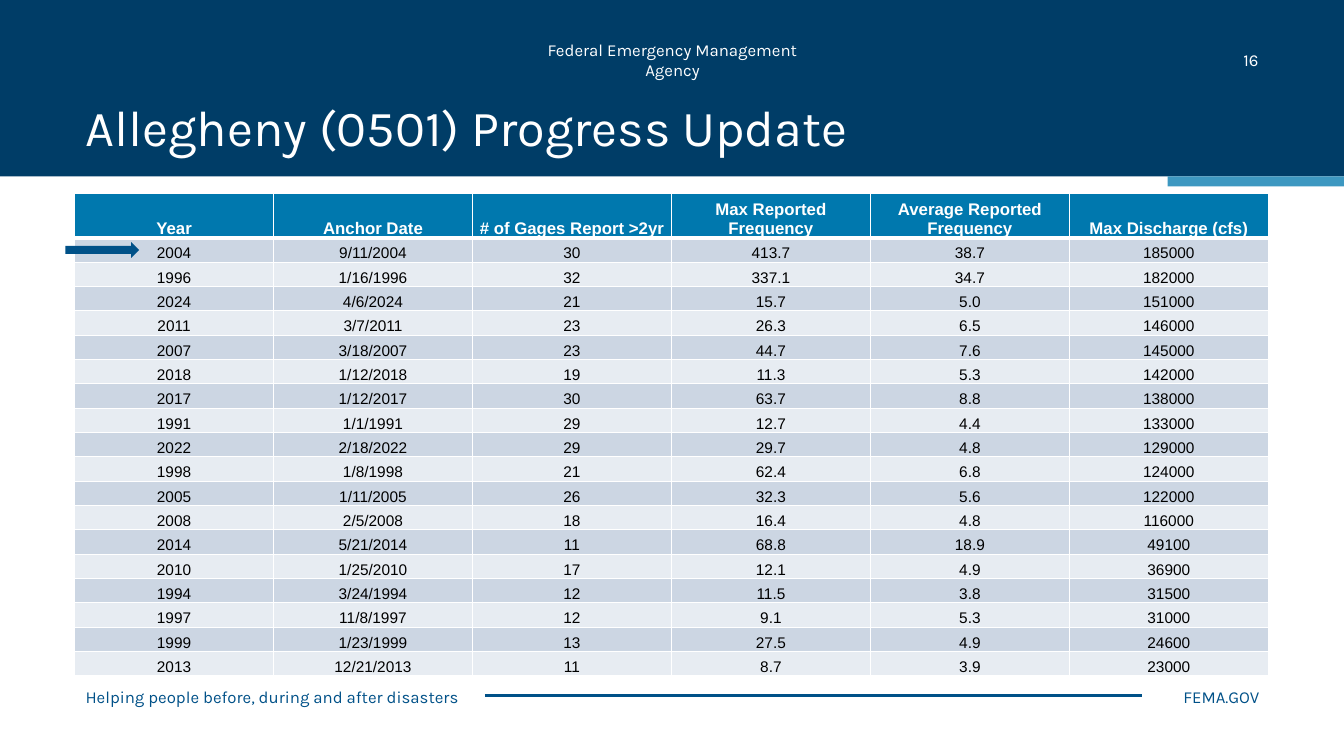
from lxml import etree
from pptx import Presentation
from pptx.dml.color import RGBColor
from pptx.enum.shapes import MSO_CONNECTOR, MSO_SHAPE as SHAPE
from pptx.enum.text import MSO_ANCHOR as ANCHOR, PP_ALIGN as ALIGN
from pptx.oxml.ns import qn
from pptx.util import Inches, Pt

COLORS = {
    "navy": "003D67", "blue": "005188", "accent": "3D98C1", "head": "0078AE",
    "odd": "CCD6E3", "even": "E7ECF2", "white": "FFFFFF", "black": "000000",
}
HEADS = ["Year", "Anchor Date", "# of Gages Report >2yr",
         "Max Reported Frequency", "Average Reported Frequency",
         "Max Discharge (cfs)"]
EVENTS = """
2004 9/11/2004 30 413.7 38.7 185000
1996 1/16/1996 32 337.1 34.7 182000
2024 4/6/2024 21 15.7 5.0 151000
2011 3/7/2011 23 26.3 6.5 146000
2007 3/18/2007 23 44.7 7.6 145000
2018 1/12/2018 19 11.3 5.3 142000
2017 1/12/2017 30 63.7 8.8 138000
1991 1/1/1991 29 12.7 4.4 133000
2022 2/18/2022 29 29.7 4.8 129000
1998 1/8/1998 21 62.4 6.8 124000
2005 1/11/2005 26 32.3 5.6 122000
2008 2/5/2008 18 16.4 4.8 116000
2014 5/21/2014 11 68.8 18.9 49100
2010 1/25/2010 17 12.1 4.9 36900
1994 3/24/1994 12 11.5 3.8 31500
1997 11/8/1997 12 9.1 5.3 31000
1999 1/23/1999 13 27.5 4.9 24600
2013 12/21/2013 11 8.7 3.9 23000
"""


def color(name):
    return RGBColor.from_string(COLORS[name])


def style(para, size, tint, align, face="Karla", bold=False):
    para.alignment = align
    font = para.font
    font.name, font.size, font.bold = face, Pt(size), bold
    font.color.rgb = color(tint)


def add_text(slide, text, box, tint, align=ALIGN.LEFT, size=12):
    frame = slide.shapes.add_textbox(*map(Inches, box)).text_frame
    frame.word_wrap = True
    frame.vertical_anchor = ANCHOR.MIDDLE
    para = frame.paragraphs[0]
    para.text = text
    style(para, size, tint, align)
    return para


def add_block(slide, kind, box, tint):
    block = slide.shapes.add_shape(kind, *map(Inches, box))
    block.shadow.inherit = False
    block.fill.solid()
    block.fill.fore_color.rgb = color(tint)
    block.line.fill.background()


def add_rule(slide, left, right, y):
    rule = slide.shapes.add_connector(
        MSO_CONNECTOR.STRAIGHT, *map(Inches, (left, y, right, y)))
    rule.line.color.rgb = color("blue")
    rule.line.width = Pt(1.5)
    etree.SubElement(rule._element.spPr, qn("a:effectLst"))


def set_edges(cell, top, bottom):
    """Draw white cell borders; top and bottom widths are in points."""
    props = cell._tc.get_or_add_tcPr()
    for side, width in zip("LRTB", (1, 1, top, bottom)):
        edge = etree.SubElement(props, qn("a:ln" + side), w=str(Pt(width)))
        fill = etree.SubElement(edge, qn("a:solidFill"))
        etree.SubElement(fill, qn("a:srgbClr"), val=COLORS["white"])


def fill_cell(cell, text, row):
    set_edges(cell, 3 if row == 1 else 1, 3 if row == 0 else 1)
    cell.fill.solid()
    band = "head" if row == 0 else "odd" if row % 2 else "even"
    cell.fill.fore_color.rgb = color(band)
    cell.margin_left = cell.margin_right = cell.margin_top = Inches(0.01)
    cell.margin_bottom = 0
    cell.vertical_anchor = ANCHOR.BOTTOM
    cell.text = text
    size, tint = (12, "white") if row == 0 else (11, "black")
    style(cell.text_frame.paragraphs[0], size, tint, ALIGN.CENTER,
          "Arial", row == 0)


def add_grid(slide, box, head):
    rows = [HEADS] + [line.split() for line in EVENTS.strip().splitlines()]
    width, height = box[2:]
    table = slide.shapes.add_table(
        len(rows), len(HEADS), *map(Inches, box)).table
    for col in table.columns:
        col.width = Inches(width / len(HEADS))
    step = (height - head) / (len(rows) - 1)
    for r, row in enumerate(rows):
        table.rows[r].height = Inches(step if r else head)
        for c, text in enumerate(row):
            fill_cell(table.cell(r, c), text, r)


def main():
    deck = Presentation()
    deck.slide_width, deck.slide_height = Inches(13.33), Inches(7.5)
    slide = deck.slides.add_slide(deck.slide_layouts[6])

    add_block(slide, SHAPE.RECTANGLE, (0, 0, 13.33, 1.75), "navy")
    add_block(slide, SHAPE.RECTANGLE, (11.58, 1.75, 1.75, 0.1), "accent")
    add_text(slide, "Federal Emergency Management Agency",
             (5.07, 0.44, 3.2, 0.3), "white", ALIGN.CENTER)
    add_text(slide, "16", (11.58, 0.44, 1, 0.3), "white", ALIGN.RIGHT)
    title = add_text(slide, "Allegheny (0501) Progress Update",
                     (0.75, 1, 11.84, 0.5), "white", size=36)
    title.line_spacing = Pt(44)

    add_grid(slide, (0.74, 1.92, 11.84, 4.79), 0.44)
    add_block(slide, SHAPE.RIGHT_ARROW, (0.65, 2.4, 0.73, 0.16), "blue")

    add_text(slide, "Helping people before, during and after disasters",
             (0.75, 6.76, 4.2, 0.3), "blue")
    add_rule(slide, 4.81, 11.33, 6.9)
    add_text(slide, "FEMA.GOV", (11.59, 6.76, 1, 0.3), "blue", ALIGN.RIGHT)
    deck.save("out.pptx")


if __name__ == "__main__":
    main()
